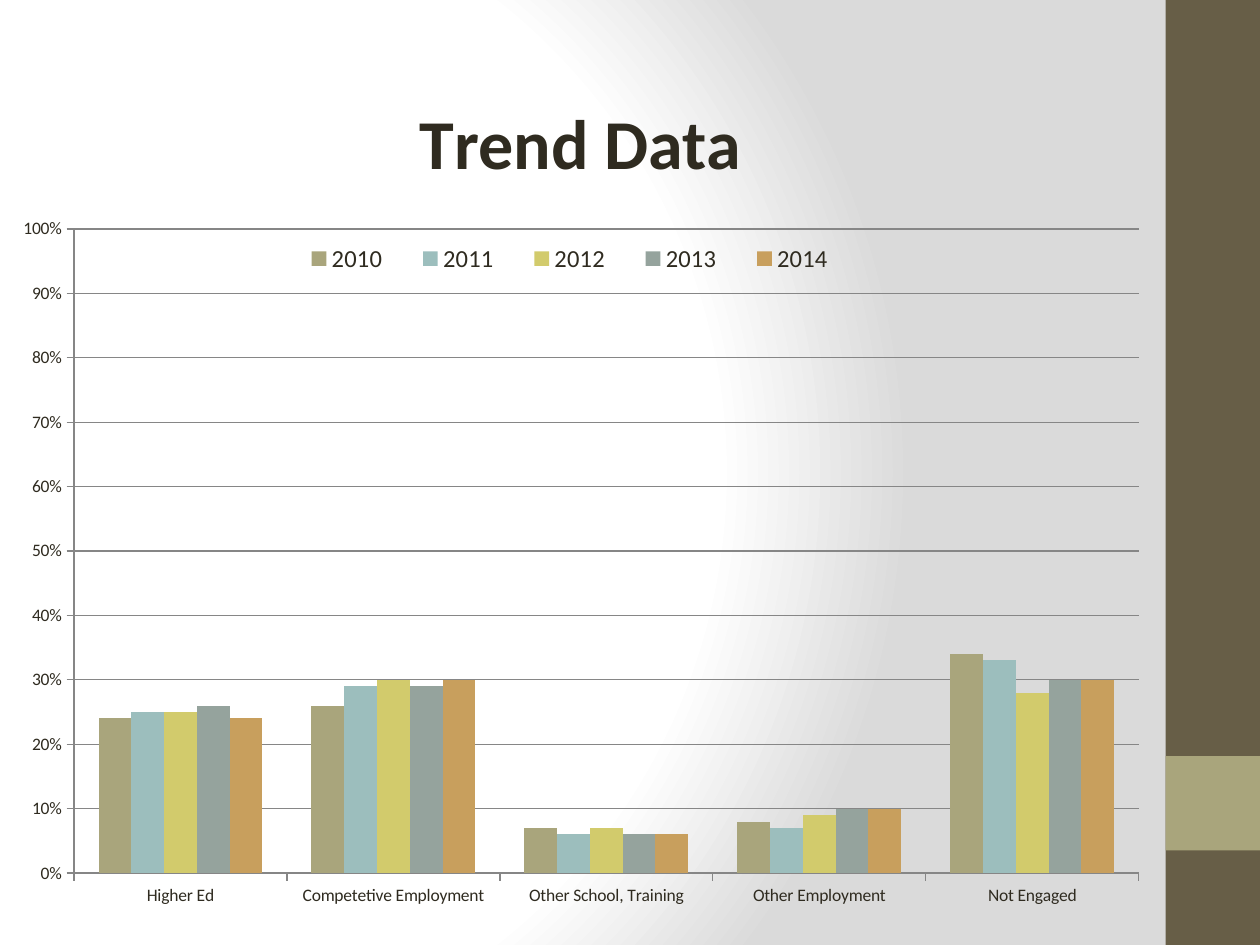
from lxml import etree
from pptx import Presentation
from pptx.chart.data import CategoryChartData
from pptx.dml.color import RGBColor
from pptx.enum.chart import XL_CHART_TYPE as ChartType
from pptx.enum.chart import XL_LEGEND_POSITION as LegendPosition
from pptx.enum.chart import XL_TICK_MARK as TickMark
from pptx.enum.shapes import MSO_SHAPE as Shape
from pptx.oxml import parse_xml
from pptx.oxml.ns import nsdecls, qn
from pptx.util import Inches, Pt

FONT = "Calibri"
TEXT, GRID, BAND, ACCENT = "2F2B20", "868686", "675E47", "A9A57C"
BACKGROUND_STOPS = [(0, "FFFFFF"), (75, "FFFFFF"), (100, "DADADA")]
CATEGORIES = ["Higher Ed", "Competetive Employment", "Other School, Training",
              "Other Employment", "Not Engaged"]
SERIES = [
    ("2010", "A9A57C", (0.24, 0.26, 0.07, 0.08, 0.34)),
    ("2011", "9CBEBD", (0.25, 0.29, 0.06, 0.07, 0.33)),
    ("2012", "D2CB6C", (0.25, 0.30, 0.07, 0.09, 0.28)),
    ("2013", "95A39D", (0.26, 0.29, 0.06, 0.10, 0.30)),
    ("2014", "C89F5D", (0.24, 0.30, 0.06, 0.10, 0.30)),
]


def color(value):
    return RGBColor.from_string(value)


def style_font(font, size, bold=False):
    font.name = FONT
    font.size = Pt(size)
    font.bold = bold
    font.color.rgb = color(TEXT)


def paint_background(page):
    """Fill the page with a circular gradient, which needs XML."""
    page.background.fill.solid()
    properties = page.element.find(".//" + qn("p:bgPr"))
    stops = "".join(
        f'<a:gs pos="{position * 1000}"><a:srgbClr val="{value}"/></a:gs>'
        for position, value in BACKGROUND_STOPS)
    gradient = parse_xml(
        f'<a:gradFill {nsdecls("a")} rotWithShape="1"><a:gsLst>{stops}</a:gsLst>'
        '<a:path path="circle"><a:fillToRect l="20000" t="50000" r="100000" b="50000"/>'
        '</a:path></a:gradFill>')
    properties.replace(properties[0], gradient)


def add_block(page, left, top, width, height, fill):
    block = page.shapes.add_shape(Shape.RECTANGLE, left, top, width, height)
    block.shadow.inherit = False
    block.fill.solid()
    block.fill.fore_color.rgb = color(fill)
    block.line.fill.background()


def add_side_band(page, left, top, width, height):
    add_block(page, left, top, width, height, BAND)
    add_block(page, left, top + Inches(6), width, width, ACCENT)


def place(element, index, inner=False, **fractions):
    """Give a chart part a manual layout in fractions of the chart box."""
    for old in element.findall(qn("c:layout")):
        element.remove(old)
    layout = etree.Element(qn("c:layout"))
    manual = etree.SubElement(layout, qn("c:manualLayout"))
    settings = [("layoutTarget", "inner")] if inner else []
    settings += [("xMode", "edge"), ("yMode", "edge"), *fractions.items()]
    for name, value in settings:
        etree.SubElement(manual, qn(f"c:{name}")).set("val", str(value))
    element.insert(index, layout)


def style_axes(chart):
    values, categories = chart.value_axis, chart.category_axis
    values.minimum_scale, values.maximum_scale = 0, 1
    values.major_unit = 0.1
    values.tick_labels.number_format = "0%"
    values.tick_labels.number_format_is_linked = False
    values.has_major_gridlines = True
    for axis in (values, categories):
        axis.major_tick_mark = TickMark.OUTSIDE
        axis.minor_tick_mark = TickMark.NONE
        style_font(axis.tick_labels.font, 10)
    for line in (values.format.line, categories.format.line,
                 values.major_gridlines.format.line):
        line.color.rgb = color(GRID)
        line.width = Pt(0.75)


def style_title(chart):
    chart.has_title = True
    title = chart.chart_title
    title.text_frame.text = "Trend Data"
    style_font(title.text_frame.paragraphs[0].runs[0].font, 40, bold=True)
    title._element.find(qn("c:overlay")).set("val", "1")
    place(title._element, 1, x=0.35, y=0.09)


def style_legend(chart):
    chart.has_legend = True
    legend = chart.legend
    legend.position = LegendPosition.TOP
    legend.include_in_layout = False
    style_font(legend.font, 14)
    place(legend._element, 1, x=0.24, y=0.25, w=0.5, h=0.06)


def add_trend_chart(page, left, top, width, height):
    chart_data = CategoryChartData(number_format="0%")
    chart_data.categories = CATEGORIES
    for name, _, values in SERIES:
        chart_data.add_series(name, values)
    chart = page.shapes.add_chart(ChartType.COLUMN_CLUSTERED, left, top,
                                  width, height, chart_data).chart
    style_font(chart.font, 10)
    plot = chart.plots[0]
    plot.gap_width, plot.overlap = 150, 0
    plot.vary_by_categories = False
    for series, (_, fill, _) in zip(plot.series, SERIES):
        series.format.fill.solid()
        series.format.fill.fore_color.rgb = color(fill)
    style_axes(chart)
    style_title(chart)
    style_legend(chart)
    plot_area = chart.element.find(".//" + qn("c:plotArea"))
    place(plot_area, 0, inner=True, x=0.0636, y=0.248, w=0.9157, h=0.6975)


def main():
    deck = Presentation()
    deck.slide_width, deck.slide_height = Inches(10), Inches(7.5)
    page = deck.slides.add_slide(deck.slide_layouts[6])
    paint_background(page)
    add_side_band(page, Inches(9.25), 0, Inches(0.75), deck.slide_height)
    add_trend_chart(page, 0, 0, Inches(9.23), Inches(7.33))
    deck.save("out.pptx")


if __name__ == "__main__":
    main()
